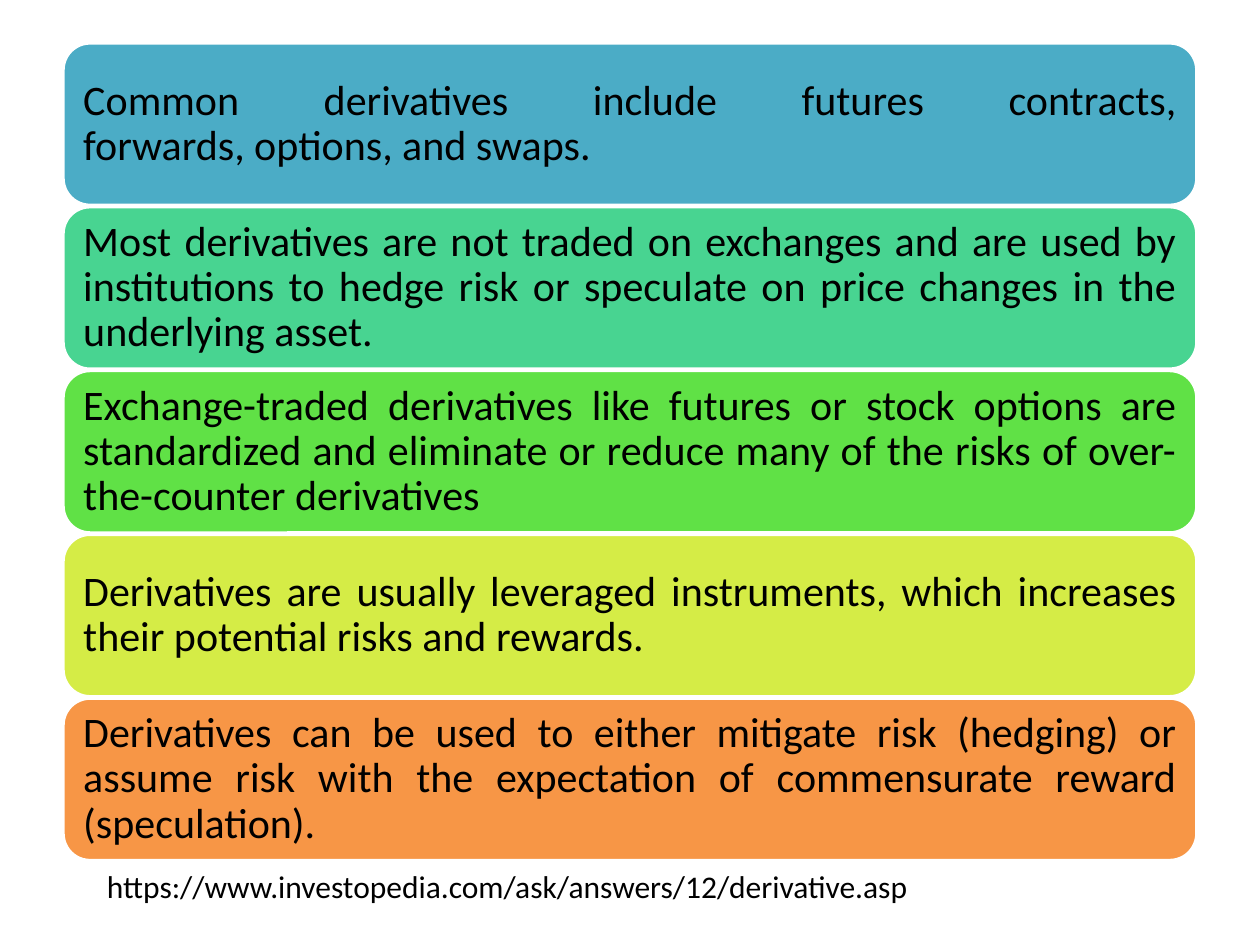
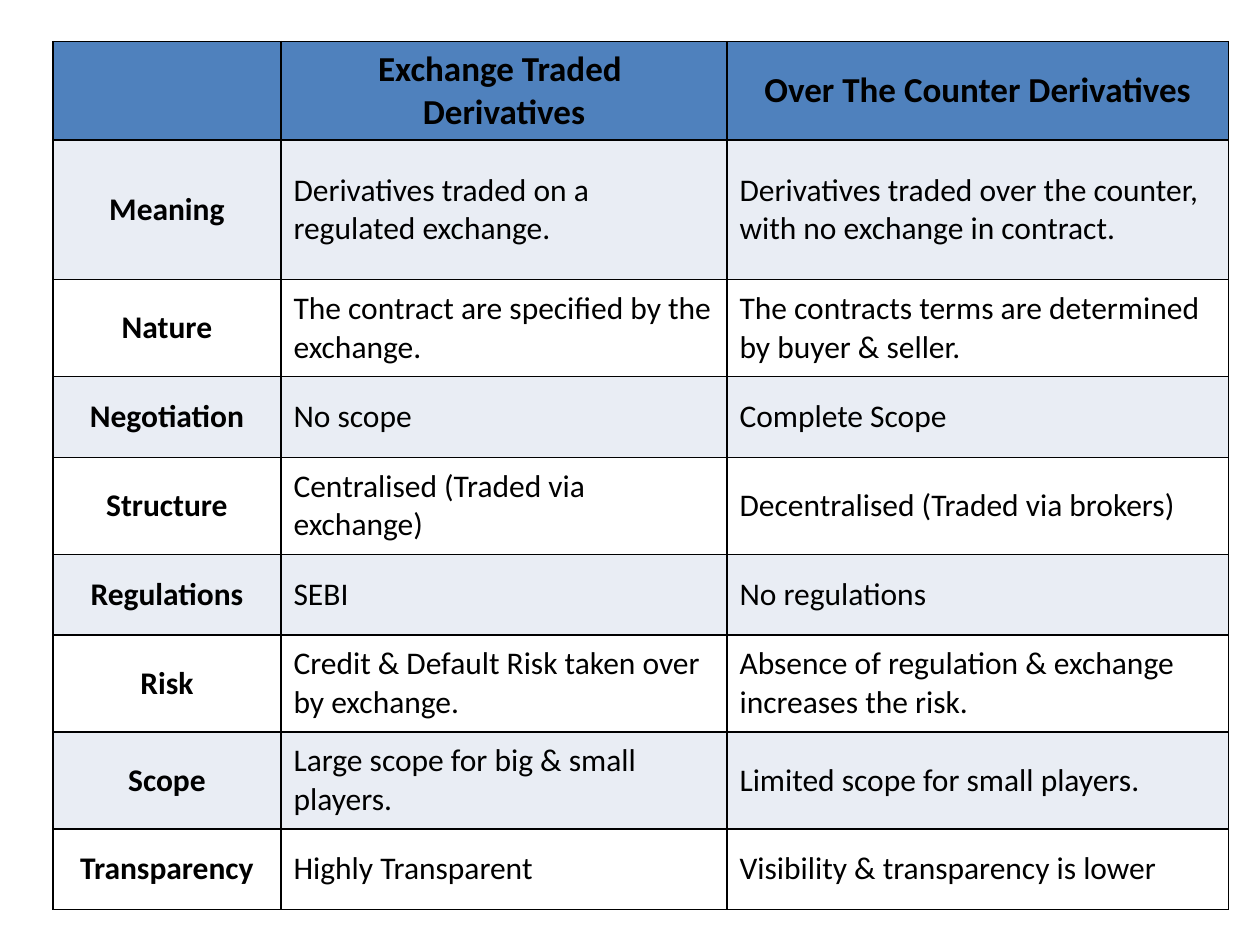
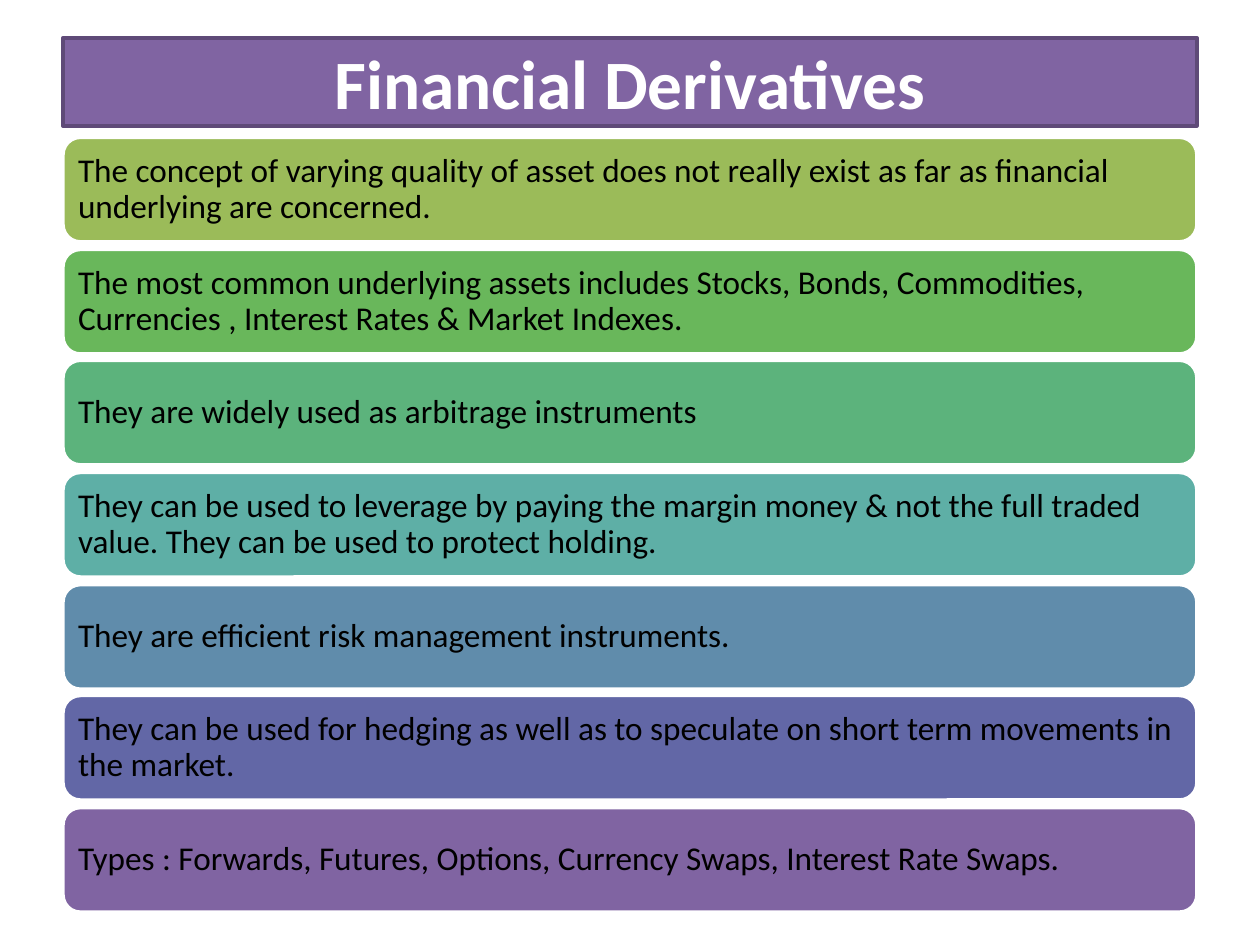
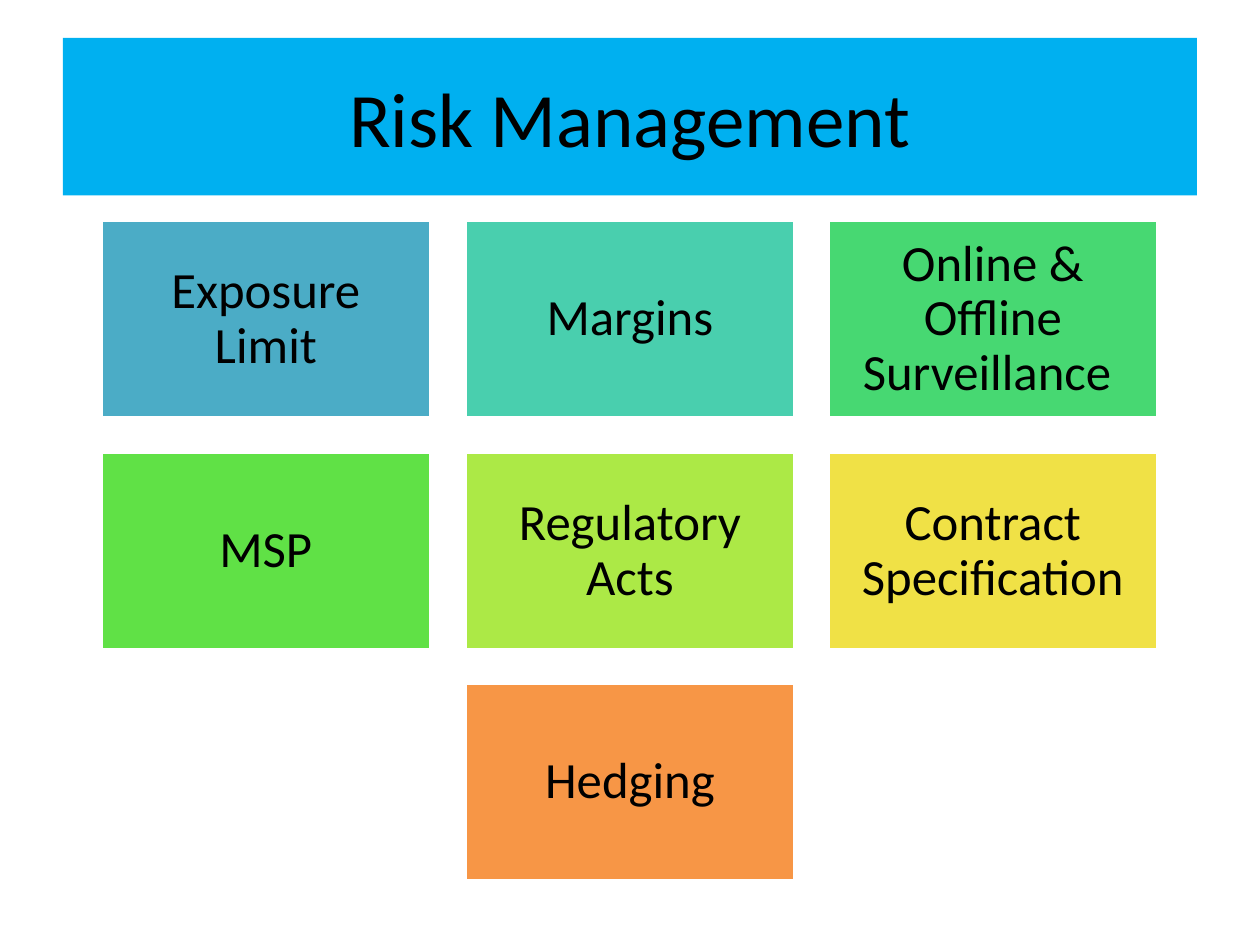
from dataclasses import dataclass

from lxml.etree import SubElement
from pptx import Presentation
from pptx.dml.color import RGBColor as Rgb
from pptx.enum.shapes import MSO_SHAPE as Kind
from pptx.enum.text import MSO_ANCHOR as Anchor, PP_ALIGN as Align
from pptx.oxml.ns import qn
from pptx.util import Pt

PX = 9144  # one px is a hundredth of an inch
HARD = chr(160)  # space that does not break a line


@dataclass(frozen=True)
class Theme:
    font: str = "Calibri"
    ink: str = "000000"
    white: str = "FFFFFF"
    violet: str = "8064A2"
    plum: str = "5F4A78"
    sky: str = "00B0F0"
    head: str = "4F81BD"
    band: str = "E9EDF4"
    facts: tuple = ("4BACC6", "48D491", "60E146", "D5EC46", "F79646")
    uses: tuple = ("9BBB59", "69B75B", "5CB37C", "5EAFA6", "608CAB", "6267A6", "8064A2")
    tiles: tuple = ("4BACC6", "49CFAE", "47D872", "60E146", "ACE946", "F0E146", "F79646")
    title: float = 44
    title_fit: float = 39.6
    tile: float = 29
    fact: float = 24
    top: float = 20
    use: float = 19
    body: float = 18


T = Theme()


def write(frame, text, size, align=Align.LEFT, color=T.ink, bold=False, gap=None, pad=None):
    """Fill a text frame with one formatted paragraph; pad is the inset in px."""
    frame.word_wrap = True
    frame.vertical_anchor = Anchor.MIDDLE
    if pad:
        for side in ("left", "top", "right", "bottom"):
            setattr(frame, f"margin_{side}", pad * PX)
    par = frame.paragraphs[0]
    par.alignment, par.line_spacing = align, gap
    run = par.add_run()
    run.text = text
    for key, val in {"name": T.font, "size": Pt(size), "bold": bold}.items():
        setattr(run.font, key, val)
    run.font.color.rgb = Rgb.from_string(color)


def block(slide, kind, box, fill, text, size, edge=T.white, **look):
    """Add a filled shape with text; an edge of None leaves it without a line."""
    shape = slide.shapes.add_shape(kind, *(n * PX for n in box))
    shape.shadow.inherit = False
    shape.fill.solid()
    shape.fill.fore_color.rgb = Rgb.from_string(fill)
    if edge:
        shape.line.color.rgb = Rgb.from_string(edge)
        shape.line.width = Pt(2)
    else:
        shape.line.fill.background()
    write(shape.text_frame, text, size, **look)


deck = Presentation()
deck.slide_width, deck.slide_height = 1000 * PX, 750 * PX
blank = deck.slide_layouts[6]

# Slide 1: key facts
slide = deck.slides.add_slide(blank)
facts = [
    f"Common derivatives include futures contracts, forwards,{HARD}options, and swaps.",
    "Most derivatives are not traded on exchanges and are used by institutions to hedge risk "
    "or speculate on price changes in the underlying asset.",
    "Exchange-traded derivatives like futures or stock options are standardized and eliminate "
    "or reduce many of the risks of over-the-counter derivatives",
    "Derivatives are usually leveraged instruments, which increases their potential risks "
    "and rewards.",
    "Derivatives can be used to either mitigate risk (hedging) or assume risk with the "
    "expectation of commensurate reward (speculation).",
]
for i, (text, fill) in enumerate(zip(facts, T.facts)):
    block(slide, Kind.ROUNDED_RECTANGLE, (50, 34 + 130 * i, 900, 129), fill, text, T.fact,
          align=Align.JUSTIFY, gap=0.9, pad=10)
link = slide.shapes.add_textbox(75 * PX, 683 * PX, 692 * PX, 40 * PX)
write(link.text_frame, "https://www.investopedia.com/ask/answers/12/derivative.asp", T.body)

# Slide 2: exchange traded against over the counter
slide = deck.slides.add_slide(blank)
rows = [
    ("", "Exchange Traded  Derivatives", "Over The Counter Derivatives"),
    ("Meaning", "Derivatives traded on a regulated exchange.",
     "Derivatives traded over the counter, with no exchange in contract."),
    ("Nature", "The contract are specified by the exchange.",
     "The contracts terms are determined by buyer & seller."),
    ("Negotiation", "No scope", "Complete Scope"),
    ("Structure", "Centralised (Traded via exchange)", "Decentralised (Traded via brokers)"),
    ("Regulations", "SEBI", "No regulations"),
    ("Risk", "Credit & Default Risk taken over by exchange.",
     "Absence of regulation & exchange increases the risk."),
    ("Scope", "Large scope for big & small players.", "Limited scope for small players."),
    ("Transparency", "Highly Transparent", "Visibility & transparency is lower"),
]
widths = (181, 354, 398)
heights = (78, 111, 77, 64, 77, 64, 77, 77, 64)
grid = slide.shapes.add_table(len(rows), len(widths), 42 * PX, 33 * PX,
                              sum(widths) * PX, sum(heights) * PX).table
for col, wide in zip(grid.columns, widths):
    col.width = wide * PX
for r, (row, high) in enumerate(zip(rows, heights)):
    grid.rows[r].height = high * PX
    for c, text in enumerate(row):
        cell = grid.cell(r, c)
        props = cell._tc.get_or_add_tcPr()
        for side in ("lnL", "lnR", "lnT", "lnB"):
            line = SubElement(props, qn(f"a:{side}"), w=str(Pt(1)))
            SubElement(SubElement(line, qn("a:solidFill")), qn("a:srgbClr"), val=T.ink)
        cell.fill.solid()
        tint = T.head if r == 0 else T.band if r % 2 else T.white
        cell.fill.fore_color.rgb = Rgb.from_string(tint)
        cell.vertical_anchor = Anchor.MIDDLE
        if text:
            label = r == 0 or c == 0
            write(cell.text_frame, text, T.body if r else T.top, bold=label,
                  align=Align.CENTER if label else Align.LEFT)

# Slide 3: financial derivatives
slide = deck.slides.add_slide(blank)
block(slide, Kind.RECTANGLE, (50, 30, 900, 70), T.violet, "Financial Derivatives",
      T.title_fit, edge=T.plum, align=Align.CENTER, color=T.white, bold=True)
uses = [
    "The concept of varying quality of asset does not really exist as far as financial "
    "underlying are concerned.",
    "The most common underlying assets includes Stocks, Bonds, Commodities, Currencies , "
    "Interest Rates & Market Indexes.",
    "They are widely used as arbitrage instruments",
    "They can be used to leverage by paying the margin money & not the full traded value. "
    "They can be used to protect holding.",
    "They are efficient risk management instruments.",
    "They can be used for hedging as well as to speculate on short term movements in the market.",
    "Types : Forwards, Futures, Options, Currency Swaps, Interest Rate Swaps.",
]
for i, (text, fill) in enumerate(zip(uses, T.uses)):
    block(slide, Kind.ROUNDED_RECTANGLE, (50, 109 + round(532 * i / 6), 900, 83), fill, text,
          T.use, gap=0.9, pad=8)

# Slide 4: risk management, three tiles to a row with the last one centred
slide = deck.slides.add_slide(blank)
block(slide, Kind.RECTANGLE, (50, 30, 900, 125), T.sky, "Risk Management", T.title,
      edge=None, align=Align.CENTER)
tools = ["Exposure Limit", "Margins", "Online & Offline Surveillance ", "MSP",
         "Regulatory Acts", "Contract Specification", "Hedging"]
for i, (text, fill) in enumerate(zip(tools, T.tiles)):
    r, c = divmod(i, 3)
    if i == len(tools) - 1:
        c = 1
    box = (80 + (577 * c + 1) // 2, 175 + (367 * r + 1) // 2, 262, 157)
    block(slide, Kind.RECTANGLE, box, fill, text, T.tile, align=Align.CENTER, gap=0.9, pad=12)

deck.save("out.pptx")
